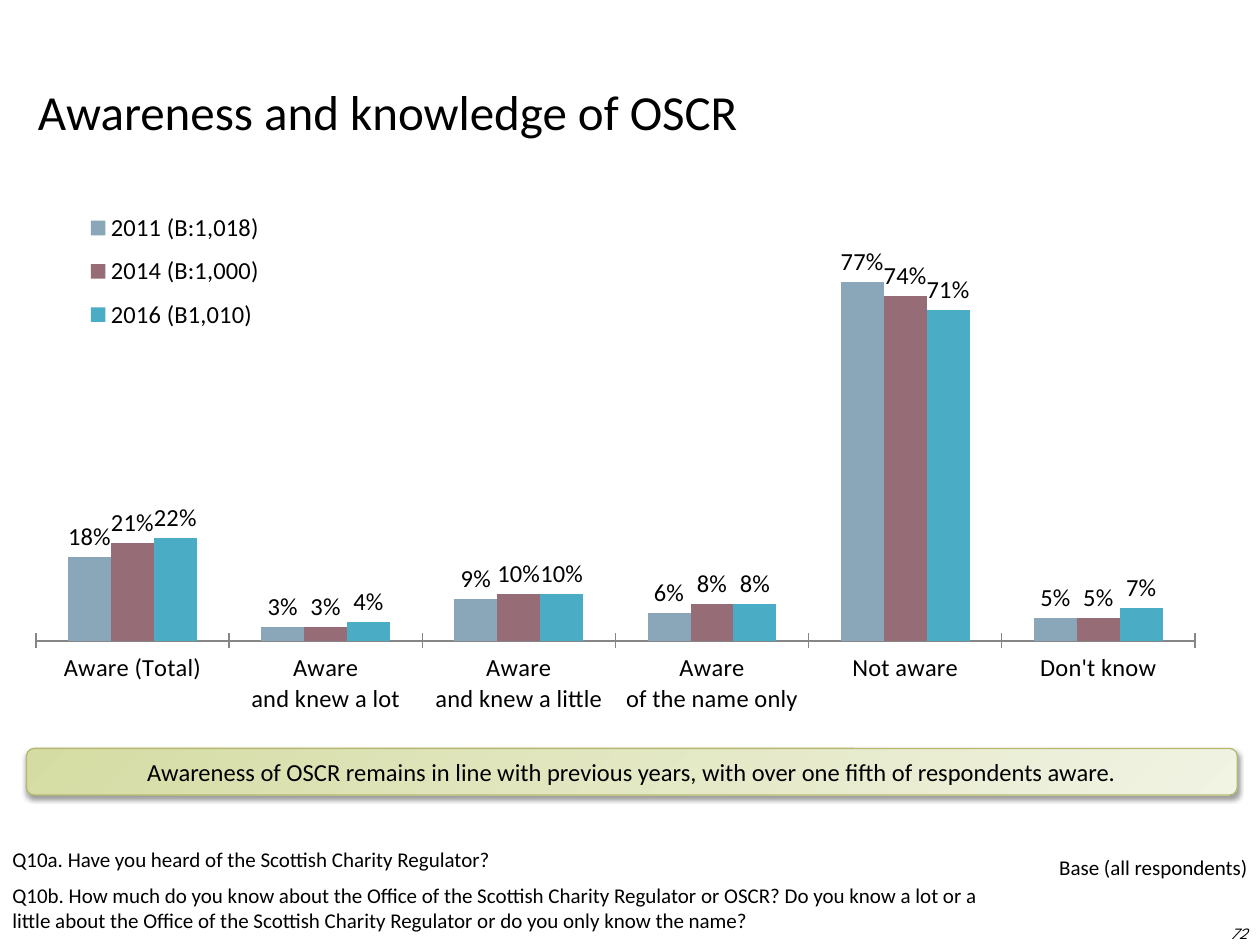
from lxml import etree
from pptx import Presentation
from pptx.chart.data import CategoryChartData
from pptx.dml.color import RGBColor
from pptx.enum.chart import XL_CHART_TYPE as Kind, XL_LABEL_POSITION as Spot
from pptx.enum.chart import XL_LEGEND_POSITION as Side, XL_TICK_MARK as Tick
from pptx.enum.shapes import MSO_SHAPE as Form
from pptx.enum.text import MSO_ANCHOR as Anchor, PP_ALIGN as Align
from pptx.oxml import parse_xml
from pptx.oxml.ns import nsdecls, qn
from pptx.util import Inches, Pt

COLORS = {"ink": "000000", "axis": "868686", "edge": "B7B870",
          "dark": "D5DCA3", "pale": "F1F3E3"}
TITLE = "Awareness and knowledge of OSCR"
FINDING = ("Awareness of OSCR remains in line with previous years, "
           "with over one fifth of respondents aware.")
ASKED = [
    "Q10a. Have you heard of the Scottish Charity Regulator?",
    "Q10b. How much do you know about the Office of the Scottish Charity "
    "Regulator or OSCR? Do you know a lot or a little about the Office of the "
    "Scottish Charity Regulator or do you only know the name?",
]
BASE = "Base (all respondents)"
PAGE = "72"
CATS = ["Aware (Total)", "Aware\nand knew a lot", "Aware\nand knew a little",
        "Aware\nof the name only", "Not aware", "Don't know"]
SERIES = [
    ("2011 (B:1,018)", "8AA7B9", (0.18, 0.03, 0.09, 0.06, 0.77, 0.05)),
    ("2014 (B:1,000)", "966D77", (0.21, 0.03, 0.10, 0.08, 0.74, 0.05)),
    ("2016 (B1,010)", "4BACC6", (0.22, 0.04, 0.10, 0.08, 0.71, 0.07)),
]


def rgb(name):
    return RGBColor.from_string(COLORS[name])


def place(shape, box):
    shape.left, shape.top, shape.width, shape.height = map(Inches, box)


def write(shape, lines, size=12, face="Calibri", align=Align.LEFT,
          anchor=Anchor.TOP, italic=False):
    frame = shape.text_frame
    frame.word_wrap = True
    frame.vertical_anchor = anchor
    frame.text = "\n".join(lines)
    for i, para in enumerate(frame.paragraphs):
        para.alignment = align
        para.space_before = Pt(size / 2 if i else 0)
        font = para.font
        font.size, font.name, font.italic = Pt(size), face, italic
        font.color.rgb = rgb("ink")


def add_note(slide, box, lines, **style):
    write(slide.shapes.add_textbox(*map(Inches, box)), lines, **style)


def set_layout(part, box, inner=False):
    """Fix a chart part at box, given as fractions of the chart."""
    for old in part.findall(qn("c:layout")):
        part.remove(old)
    rows = ['<c:layoutTarget val="inner"/>'] if inner else []
    rows += [f'<c:{k}Mode val="edge"/>' for k in "xy"]
    rows += [f'<c:{k} val="{v}"/>' for k, v in zip("xywh", box)]
    layout = parse_xml(f'<c:layout {nsdecls("c")}><c:manualLayout>'
                       f'{"".join(rows)}</c:manualLayout></c:layout>')
    if inner:
        part.insert(0, layout)
    else:
        part.find(qn("c:legendPos")).addnext(layout)


def add_bars(slide, box):
    data = CategoryChartData(number_format="0%")
    data.categories = CATS
    for name, _, vals in SERIES:
        data.add_series(name, vals)
    chart = slide.shapes.add_chart(
        Kind.COLUMN_CLUSTERED, *map(Inches, box), data).chart
    chart.has_title = False
    chart.font.size, chart.font.name = Pt(14), "Calibri"
    chart.font.color.rgb = rgb("ink")

    cat, val = chart.category_axis, chart.value_axis
    cat.major_tick_mark = Tick.CROSS
    cat.format.line.color.rgb = rgb("axis")
    val.minimum_scale, val.maximum_scale, val.major_unit = 0, 1, 0.1
    val.has_major_gridlines = False
    val.visible = False

    plot = chart.plots[0]
    plot.gap_width, plot.overlap, plot.vary_by_categories = 150, 0, False
    plot.has_data_labels = True
    tags = plot.data_labels
    tags.show_value, tags.position = True, Spot.OUTSIDE_END
    tags.number_format, tags.number_format_is_linked = "0%", False
    for bars, (_, color, _) in zip(plot.series, SERIES):
        bars.format.fill.solid()
        bars.format.fill.fore_color.rgb = RGBColor.from_string(color)

    chart.has_legend = True
    chart.legend.position = Side.RIGHT
    chart.legend.include_in_layout = False
    area = chart._chartSpace.chart
    set_layout(area.plotArea, (0, 0, 1, 0.75), inner=True)
    set_layout(area.find(qn("c:legend")), (0.02, 0.04, 0.2, 0.23))


def add_banner(slide, box):
    bar = slide.shapes.add_shape(Form.ROUNDED_RECTANGLE, *map(Inches, box))
    bar.fill.gradient()
    bar.fill.gradient_angle = 315
    for stop, name in zip(bar.fill.gradient_stops, ("dark", "pale")):
        stop.color.rgb = rgb(name)
    bar.line.color.rgb, bar.line.width = rgb("edge"), Pt(0.75)
    bar.shadow.inherit = False
    glow = bar._element.spPr.find(qn("a:effectLst"))
    cast = etree.SubElement(glow, qn("a:outerShdw"), blurRad=str(Pt(3.1)),
                            dist=str(Pt(1.6)), dir="5400000", rotWithShape="0")
    tint = etree.SubElement(cast, qn("a:srgbClr"), val=COLORS["ink"])
    etree.SubElement(tint, qn("a:alpha"), val="38000")
    write(bar, [FINDING], size=14, align=Align.CENTER, anchor=Anchor.MIDDLE)


def main():
    deck = Presentation()
    deck.slide_width, deck.slide_height = Inches(10), Inches(7.5)
    slide = deck.slides.add_slide(deck.slide_layouts[5])
    title = slide.shapes.title
    place(title, (0.2, 0.29, 7.17, 1.18))
    write(title, [TITLE], size=28, anchor=Anchor.MIDDLE)
    add_bars(slide, (0.28, 1.39, 9.21, 4.93))
    add_banner(slide, (0.21, 5.94, 9.61, 0.37))
    add_note(slide, (0, 6.67, 8.07, 0.8), ASKED)
    add_note(slide, (1.49, 6.73, 8.51, 0.3), [BASE], align=Align.RIGHT)
    add_note(slide, (7.67, 7.21, 2.33, 0.4), [PAGE], size=9, italic=True,
             face="League Spartan", align=Align.RIGHT, anchor=Anchor.MIDDLE)
    deck.save("out.pptx")


if __name__ == "__main__":
    main()
